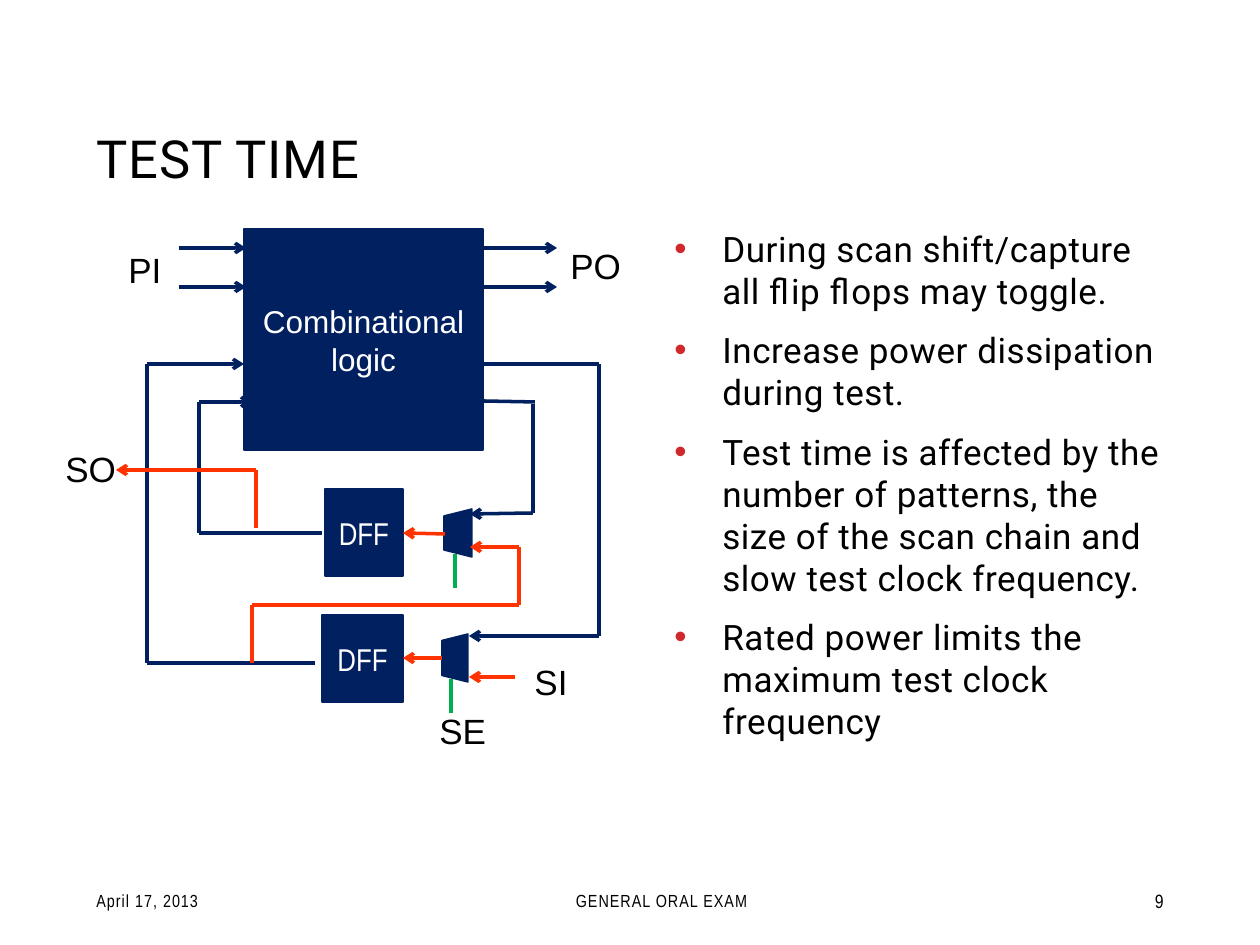
"""Build the test time slide with its scan chain diagram."""
from itertools import pairwise

from lxml import etree
from pptx import Presentation
from pptx import util as u
from pptx.dml.color import RGBColor
from pptx.enum import shapes, text
from pptx.oxml.ns import qn

SCALE = 914400 / 126
COLORS = {"navy": "002060", "red": "FF3300", "green": "00B050",
          "black": "000000", "white": "FFFFFF", "bullet": "D1282E"}
ALIGN = text.PP_ALIGN
ANCHOR = text.MSO_ANCHOR


def emu(*lengths):
    return [u.Emu(round(length * SCALE)) for length in lengths]


def write(shape, content, size=20, font="Arial", color="black", align=ALIGN.LEFT,
          anchor=ANCHOR.TOP, wrap=True, spacing=0, bullet=False):
    frame = shape.text_frame
    frame.word_wrap = wrap
    frame.vertical_anchor = anchor
    for index, line in enumerate(content.split("\n")):
        paragraph = frame.add_paragraph() if index else frame.paragraphs[0]
        paragraph.alignment = align
        if bullet:
            properties = paragraph._p.get_or_add_pPr()
            properties.set("marL", str(emu(48)[0]))
            properties.set("indent", str(emu(-48)[0]))
            tint = etree.SubElement(properties, qn("a:buClr"))
            etree.SubElement(tint, qn("a:srgbClr"), val=COLORS["bullet"])
            etree.SubElement(properties, qn("a:buFont"), typeface="Arial")
            etree.SubElement(properties, qn("a:buChar"), char="•")
            paragraph.space_before = u.Pt(4 if index else 0)
            paragraph.space_after = u.Pt(6)
        run = paragraph.add_run()
        run.text = line
        run.font.size = u.Pt(size)
        run.font.name = font
        run.font.color.rgb = RGBColor.from_string(COLORS[color])
        if spacing:
            run._r.get_or_add_rPr().set("spc", str(spacing))


presentation = Presentation()
presentation.slide_width, presentation.slide_height = emu(1260, 945)
slide = presentation.slides.add_slide(presentation.slide_layouts[6])

points = "\n".join([
    "During scan shift/capture all flip flops may toggle.",
    "Increase power dissipation during test.",
    "Test time is affected by the number of patterns, the size of the scan chain "
    "and slow test clock frequency.",
    "Rated power limits the maximum test clock frequency",
])
write(slide.shapes.add_textbox(*emu(662, 221, 514, 567)), points,
      font="Roboto", spacing=30, bullet=True)
write(slide.shapes.add_textbox(*emu(84, 38, 1092, 157)), "TEST TIME",
      size=30, font="Roboto", anchor=ANCHOR.BOTTOM, spacing=50)

footers = [
    ("April 17, 2013", 84, 210, ALIGN.LEFT, 10, 60),
    ("GENERAL ORAL EXAM", 462, 399, ALIGN.CENTER, 10, 60),
    ("9", 1040, 136, ALIGN.RIGHT, 11, 0),
]
for content, left, width, align, size, spacing in footers:
    write(slide.shapes.add_textbox(*emu(left, 876, width, 50)), content, size=size,
          font="Arial Narrow", align=align, anchor=ANCHOR.MIDDLE, spacing=spacing)

BLOCK = shapes.MSO_SHAPE.RECTANGLE
MUX = shapes.MSO_SHAPE.TRAPEZOID
blocks = [
    (BLOCK, (244, 229, 239, 221), 0, "Combinational\nlogic", "Arial"),
    (BLOCK, (325, 489, 78, 87), 0, "DFF", "Arial Narrow"),
    (BLOCK, (322, 615, 81, 87), 0, "DFF", "Arial Narrow"),
    (MUX, (434, 519, 48, 28), 270, "", "Arial"),
    (MUX, (431, 645, 48, 26), 270, "", "Arial"),
]
for preset, box, rotation, content, font in blocks:
    shape = slide.shapes.add_shape(preset, *emu(*box))
    shape.shadow.inherit = False
    shape.rotation = rotation
    shape.fill.solid()
    shape.fill.fore_color.rgb = RGBColor.from_string(COLORS["navy"])
    shape.line.color.rgb = RGBColor.from_string(COLORS["navy"])
    shape.line.width = u.Pt(0.85)
    if content:
        write(shape, content, size=18, font=font, color="white",
              align=ALIGN.CENTER, anchor=ANCHOR.MIDDLE, wrap=False)

wires = [
    ("navy", True, [(322, 533), (199, 533), (199, 402), (252, 402)]),
    ("navy", True, [(315, 663), (147, 663), (147, 364), (244, 364)]),
    ("navy", False, [(483, 401), (535, 402)]),
    ("navy", True, [(533, 404), (533, 513), (470, 514)]),
    ("navy", True, [(483, 364), (599, 364), (599, 636), (469, 636)]),
    ("navy", True, [(179, 248), (246, 248)]),
    ("navy", True, [(179, 287), (246, 287)]),
    ("navy", True, [(483, 248), (557, 248)]),
    ("navy", True, [(483, 287), (557, 287)]),
    ("red", True, [(252, 663), (252, 605), (519, 605), (519, 547), (470, 547)]),
    ("red", True, [(445, 534), (403, 533)]),
    ("red", True, [(515, 677), (469, 677)]),
    ("red", True, [(442, 658), (403, 658)]),
    ("red", True, [(256, 528), (256, 470), (116, 470)]),
    ("green", False, [(455, 554), (455, 588)]),
    ("green", False, [(451, 679), (451, 713)]),
]
for color, arrow, corners in wires:
    for start, end in pairwise(corners):
        connector = slide.shapes.add_connector(
            shapes.MSO_CONNECTOR.STRAIGHT, *emu(*start, *end))
        connector.line.color.rgb = RGBColor.from_string(COLORS[color])
        connector.line.width = u.Pt(2)
        etree.SubElement(connector._element.spPr, qn("a:effectLst"))
    if arrow:
        etree.SubElement(connector.line._get_or_add_ln(), qn("a:tailEnd"), type="arrow")

labels = [("PI", 116, 242, 59), ("PO", 558, 238, 77), ("SI", 522, 654, 59),
          ("SO", 53, 441, 77), ("SE", 427, 703, 73)]
for content, left, top, width in labels:
    write(slide.shapes.add_textbox(*emu(left, top, width, 64)), content, wrap=False)

presentation.save("out.pptx")
